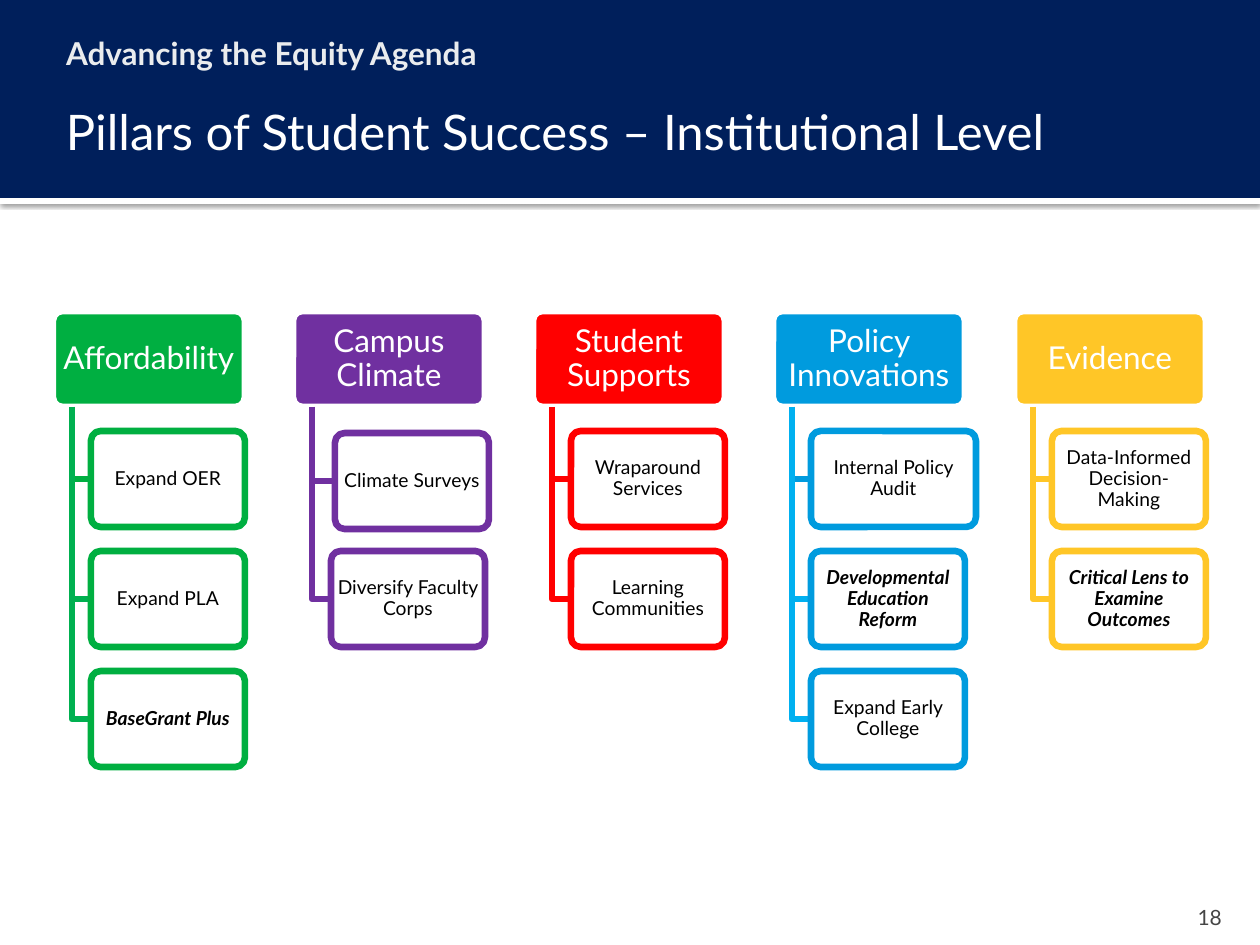
from dataclasses import dataclass

from lxml.etree import SubElement
from pptx import Presentation
from pptx.dml.color import RGBColor
from pptx.enum.shapes import MSO_SHAPE as Shape
from pptx.enum.text import MSO_ANCHOR as Anchor, MSO_AUTO_SIZE as AutoSize, PP_ALIGN as Align
from pptx.oxml.ns import qn
from pptx.util import Emu, Pt

SCALE = 914400 / 126  # EMU per px


@dataclass(frozen=True)
class Theme:
    font: str = "Lato"
    navy: str = "001F5B"
    white: str = "FFFFFF"
    black: str = "000000"
    eyebrow: str = "EAECEE"
    gray: str = "454545"
    title_size: int = 28
    head_size: int = 18
    item_size: int = 11
    number_size: int = 12
    line: float = 3.78


@dataclass(frozen=True)
class Item:
    text: str
    strong: bool = False
    dx: int = 0
    dy: int = 0
    extra_width: int = 0


@dataclass(frozen=True)
class Pillar:
    title: str
    color: str
    lower_branch: str  # colour of the branches below the first
    items: tuple[Item, ...]


T = Theme()
PILLARS = (
    Pillar("Affordability", "00AF41", "00B050", (
        Item("Expand OER"), Item("Expand PLA"), Item("BaseGrant Plus", strong=True))),
    Pillar("Campus Climate", "7030A0", "7030A0", (
        Item("Climate Surveys", dx=4, dy=2), Item("Diversify Faculty Corps"))),
    Pillar("Student Supports", "FF0000", "FF0000", (
        Item("Wraparound Services"), Item("Learning Communities"))),
    Pillar("Policy Innovations", "009BDE", "00B0F0", (
        Item("Internal Policy Audit", extra_width=11),
        Item("Developmental Education Reform", strong=True),
        Item("Expand Early College"))),
    Pillar("Evidence", "FFC627", "FFC627", (
        Item("Data-Informed Decision-Making"),
        Item("Critical Lens to Examine Outcomes", strong=True))),
)

# Pillar grid, px
FIRST_X, LAST_X = 53, 1014
HEAD_Y, HEAD_W, BOX_H = 311, 192, 96
ITEM_DX, ITEM_Y, ITEM_W, ITEM_PITCH = 38, 431, 154, 120
TRUNK_DX = 19


def px(n: int) -> Emu:
    return Emu(round(n * SCALE))


def rgb(color: str) -> RGBColor:
    return RGBColor.from_string(color)


def set_text(sp, text: str, size: int, color: str, insets: tuple[int, int, int, int],
             align=Align.LEFT, anchor=Anchor.MIDDLE, bold=False, italic=False,
             spacing: float = 1.0) -> None:
    tf = sp.text_frame
    tf.text = text
    tf.word_wrap = True
    tf.auto_size = AutoSize.NONE
    tf.vertical_anchor = anchor
    tf.margin_left, tf.margin_top, tf.margin_right, tf.margin_bottom = map(px, insets)
    p = tf.paragraphs[0]
    p.alignment = align
    p.line_spacing = spacing
    font = p.font
    font.name, font.size, font.bold, font.italic = T.font, Pt(size), bold, italic
    font.color.rgb = rgb(color)


def add_box(s, kind, x: int, y: int, w: int, h: int, fill: str, line: str | None = None):
    sp = s.shapes.add_shape(kind, px(x), px(y), px(w), px(h))
    sp.shadow.inherit = False
    sp.fill.solid()
    sp.fill.fore_color.rgb = rgb(fill)
    if line:
        sp.line.color.rgb = rgb(line)
        sp.line.width = Pt(T.line)
    else:
        sp.line.fill.background()
    return sp


def add_card(s, x: int, y: int, w: int, fill: str, line: str):
    sp = add_box(s, Shape.ROUNDED_RECTANGLE, x, y, w, BOX_H, fill, line)
    sp.adjustments[0] = 0.1
    return sp


def add_branch(s, x: int, y: int, end_x: int, end_y: int, color: str) -> None:
    builder = s.shapes.build_freeform(x, y, scale=SCALE)
    builder.add_line_segments([(x, end_y), (end_x, end_y)], close=False)
    sp = builder.convert_to_shape()
    sp.shadow.inherit = False
    sp.fill.background()
    sp.line.color.rgb = rgb(color)
    sp.line.width = Pt(T.line)


def add_pillar(s, pillar: Pillar, x: int) -> None:
    head = add_card(s, x, HEAD_Y, HEAD_W, pillar.color, T.white)
    set_text(head, pillar.title, T.head_size, T.white, (5, 4, 5, 4), Align.CENTER, spacing=0.9)
    for i, item in enumerate(pillar.items):
        left = x + ITEM_DX + item.dx
        top = ITEM_Y + i * ITEM_PITCH + item.dy
        add_branch(s, x + TRUNK_DX, HEAD_Y + BOX_H, left, top + BOX_H // 2,
                   pillar.lower_branch if i else pillar.color)
        card = add_card(s, left, top, ITEM_W + item.extra_width, T.white, pillar.color)
        set_alpha(card, 90)
        set_text(card, item.text, T.item_size, T.black, (3, 2, 3, 2), Align.CENTER,
                 bold=item.strong, italic=item.strong, spacing=0.9)


def set_alpha(sp, percent: int) -> None:
    color = sp._element.spPr.find(qn("a:solidFill"))[0]
    SubElement(color, qn("a:alpha"), val=str(percent * 1000))


def add_drop_shadow(sp) -> None:
    effects = sp._element.spPr.find(qn("a:effectLst"))
    shadow = SubElement(effects, qn("a:outerShdw"), blurRad=str(Pt(2.5)), dist=str(Pt(0.8)),
                        dir="5400000", rotWithShape="0")
    color = SubElement(shadow, qn("a:srgbClr"), val=T.black)
    SubElement(color, qn("a:alpha"), val="60000")


def add_label(s, x: int, y: int, w: int, h: int):
    return s.shapes.add_textbox(px(x), px(y), px(w), px(h))


def main() -> None:
    prs = Presentation()
    prs.slide_width, prs.slide_height = px(1260), px(945)
    s = prs.slides.add_slide(prs.slide_layouts[5])

    # Header band
    add_drop_shadow(add_box(s, Shape.RECTANGLE, 0, 198, 1260, 6, T.white))
    add_box(s, Shape.RECTANGLE, 0, 0, 1260, 198, T.navy)

    # Page number
    set_text(add_label(s, 1134, 892, 101, 38), "18", T.number_size, T.gray,
             (13, 6, 13, 0), Align.RIGHT, Anchor.BOTTOM)

    # Pillars
    for i, pillar in enumerate(PILLARS):
        add_pillar(s, pillar, FIRST_X + i * (LAST_X - FIRST_X) // (len(PILLARS) - 1))

    # Eyebrow and title, in front of the band
    set_text(add_label(s, 42, 21, 1177, 63), "Advancing the Equity Agenda", T.head_size,
             T.eyebrow, (24, 13, 13, 6), anchor=Anchor.TOP, bold=True)
    title = s.shapes.title
    title.left, title.top, title.width, title.height = map(px, (53, 73, 1155, 116))
    set_text(title, "Pillars of Student Success – Institutional Level", T.title_size,
             T.white, (13, 6, 6, 6))
    s.shapes._spTree.append(title._element)

    prs.save("out.pptx")


if __name__ == "__main__":
    main()
